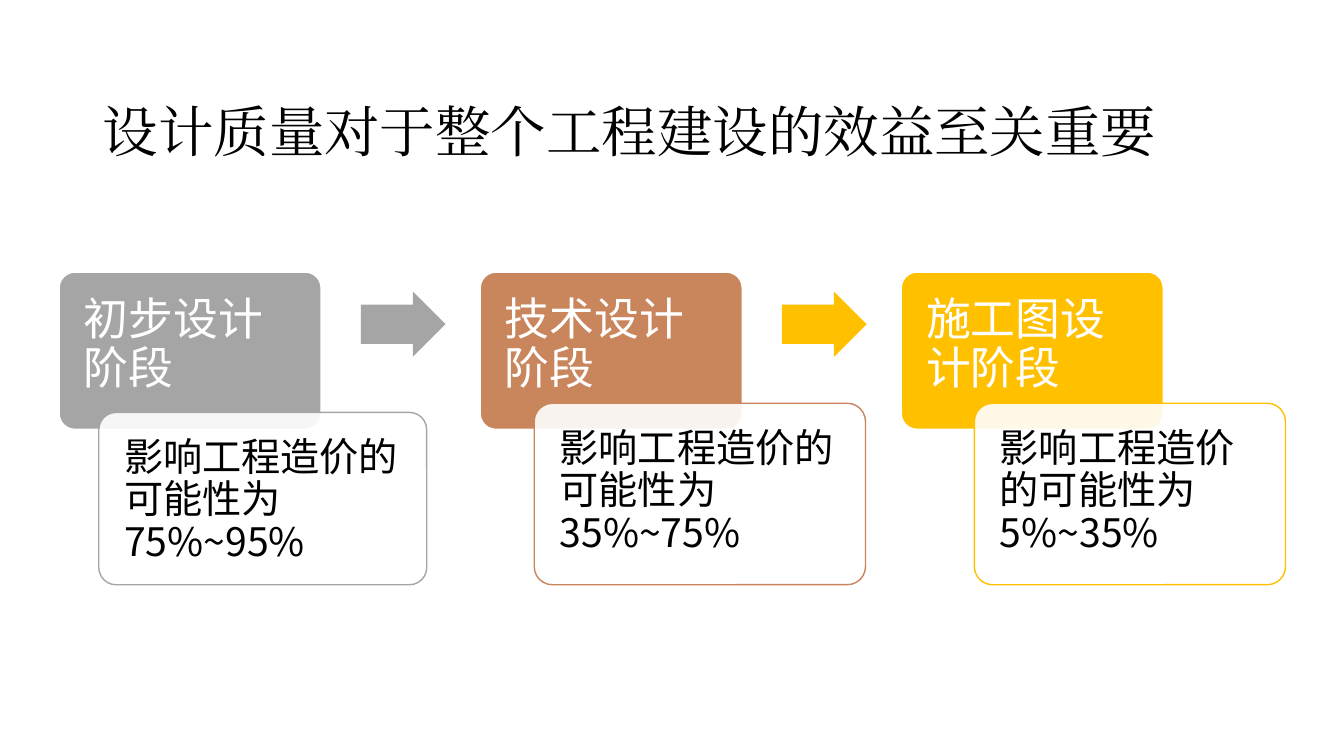
from lxml import etree
from pptx import Presentation
from pptx import util as u
from pptx.dml.color import RGBColor
from pptx.enum import shapes, text
from pptx.oxml import ns

COLORS = {
    "ink": "000000",
    "paper": "FFFFFF",
    "gray": "A5A5A5",
    "copper": "C9855C",
    "amber": "FFC000",
}
TITLE_FONT = "Times New Roman"
BODY_FONT = "Noto Sans CJK JP"

STAGE_LEFT, STAGE_PITCH = 4.4, 31.33
DETAIL_BOTTOM = 77.35
STAGES = [
    ("初步设计阶段", "影响工程造价的可能性为75%~95%", "gray", 7.35, 54.55, 24.4),
    ("技术设计阶段", "影响工程造价的可能性为35%~75%", "copper", 39.75, 53.35, 24.65),
    ("施工图设计阶段", "影响工程造价的可能性为5%~35%", "amber", 72.5, 53.35, 23.15),
]
ARROWS = ["gray", "amber"]


class StageSlide:
    def __init__(self, deck):
        self.deck = deck
        self.page = deck.slides.add_slide(deck.slide_layouts[6])

    def place(self, left, top, width, height):
        across, down = self.deck.slide_width / 100, self.deck.slide_height / 100
        return [round(share * side) for share, side in
                zip((left, top, width, height), (across, down, across, down))]

    def color(self, name):
        return RGBColor.from_string(COLORS[name])

    def label(self, box, words, size, font, color, spacing, insets, anchor):
        frame = box.text_frame
        frame.text = words
        frame.word_wrap = True
        frame.vertical_anchor = anchor
        (frame.margin_left, frame.margin_top,
         frame.margin_right, frame.margin_bottom) = map(u.Inches, insets)
        para = frame.paragraphs[0]
        para.alignment = text.PP_ALIGN.LEFT
        para.line_spacing = spacing
        span = para.runs[0]
        span.font.size = u.Pt(size)
        span.font.name = font
        span.font.color.rgb = self.color(color)
        east_asian = etree.SubElement(span.font._element, ns.qn("a:ea"))
        east_asian.set("typeface", font)

    def title(self, words, *area):
        box = self.page.shapes.add_textbox(*self.place(*area))
        self.label(box, words, 39.6, TITLE_FONT, "ink", 1.5,
                   (0.1, 0.05, 0.1, 0.05), text.MSO_ANCHOR.MIDDLE)

    def shape(self, kind, area, fill, line=None):
        box = self.page.shapes.add_shape(kind, *self.place(*area))
        box.shadow.inherit = False
        box.fill.solid()
        box.fill.fore_color.rgb = self.color(fill)
        if line:
            box.line.color.rgb = self.color(line)
            box.line.width = u.Pt(1)
        else:
            box.line.fill.background()
        return box

    def card(self, words, area, fill, line, size, color, bottom_inset):
        box = self.shape(shapes.MSO_SHAPE.ROUNDED_RECTANGLE, area, fill, line)
        box.adjustments[0] = 0.1
        self.label(box, words, size, BODY_FONT, color, 0.9,
                   (0.2, 0.2, 0.2, bottom_inset), text.MSO_ANCHOR.TOP)
        return box

    def stage(self, words, color, *area):
        self.card(words, area, color, "paper", 32, "paper", 0.6)

    def detail(self, words, color, *area):
        box = self.card(words, area, "paper", color, 28, "ink", 0.2)
        tint = box._element.spPr.find(ns.qn("a:solidFill"))[0]
        etree.SubElement(tint, ns.qn("a:alpha")).set("val", "90000")

    def arrow(self, color, *area):
        box = self.shape(shapes.MSO_SHAPE.RIGHT_ARROW, area, color)
        box.adjustments[0] = 0.6
        box.adjustments[1] = 0.5


def main():
    deck = Presentation()
    deck.slide_width, deck.slide_height = u.Inches(13.33), u.Inches(7.5)
    slide = StageSlide(deck)
    slide.title("设计质量对于整个工程建设的效益至关重要", 6.9, 5.33, 86.25, 19.33)
    for index, (name, effect, color, left, top, width) in enumerate(STAGES):
        stage_left = STAGE_LEFT + index * STAGE_PITCH
        slide.stage(name, color, stage_left, 36, 19.5, 20.8)
        slide.detail(effect, color, left, top, width, DETAIL_BOTTOM - top)
        if index < len(ARROWS):
            slide.arrow(ARROWS[index], stage_left + 22.45, 38.55, 6.3, 8.67)
    deck.save("out.pptx")


if __name__ == "__main__":
    main()
